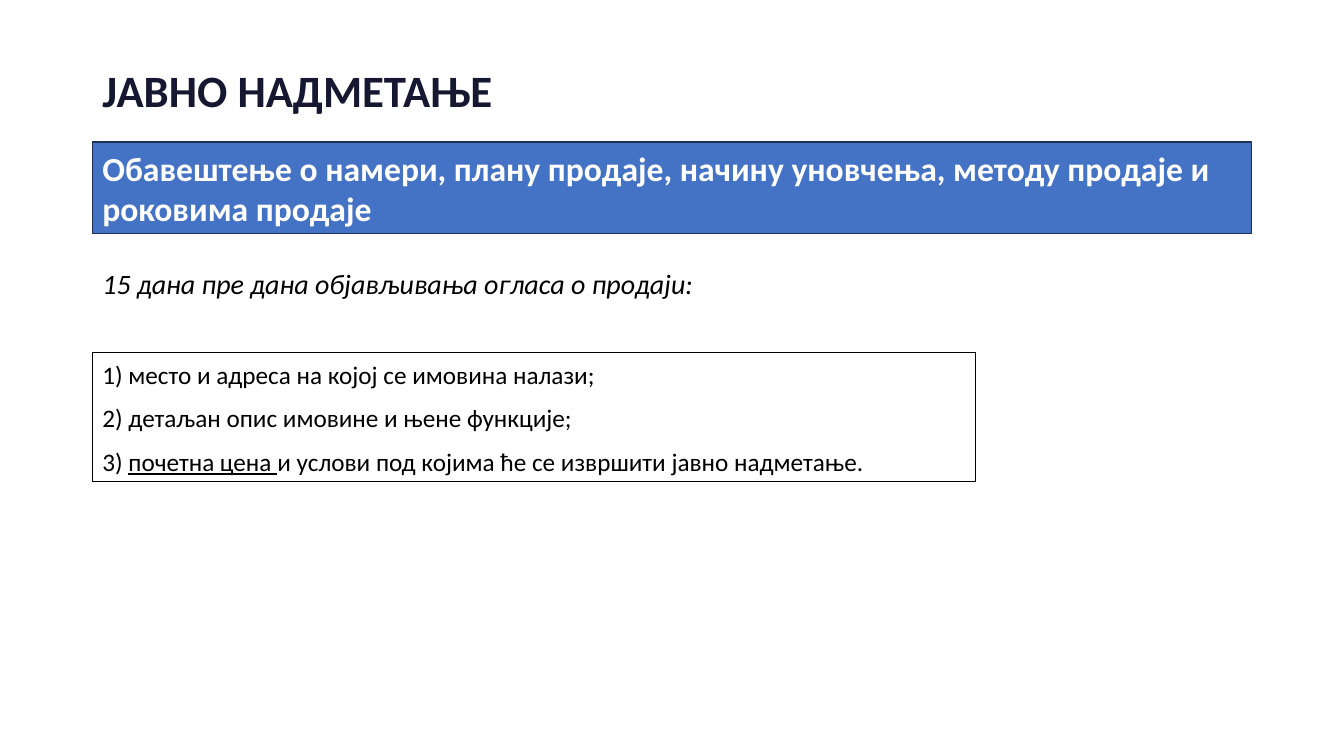
from dataclasses import dataclass
from typing import Optional

from pptx import Presentation
from pptx.dml.color import RGBColor
from pptx.enum.shapes import MSO_SHAPE
from pptx.enum.text import MSO_ANCHOR as Anchor, MSO_AUTO_SIZE as AutoSize, PP_ALIGN as Align
from pptx.slide import Slide
from pptx.util import Cm, Pt

WHITE = RGBColor(0xFF, 0xFF, 0xFF)
BLACK = RGBColor(0x00, 0x00, 0x00)
NAVY = RGBColor(0x16, 0x17, 0x30)
BLUE = RGBColor(0x44, 0x72, 0xC4)
DARK_BLUE = RGBColor(0x1E, 0x32, 0x56)

FONT = "Calibri"
LEFT = 2.33
FULL_WIDTH = 29.21


@dataclass(frozen=True)
class Border:
    color: RGBColor
    points: float


@dataclass(frozen=True)
class Block:
    paragraphs: list[list[str]]
    top: float
    height: float
    size: int
    width: float = FULL_WIDTH
    color: RGBColor = BLACK
    bold: bool = False
    italic: bool = False
    fill: Optional[RGBColor] = None
    border: Optional[Border] = None
    anchor: Anchor = Anchor.TOP
    line_spacing: float = 1.0
    space_after: int = 0
    underlined: str = ""


BLOCKS = [
    Block([["ЈАВНО НАДМЕТАЊЕ"]], top=1.57, height=1.5, size=32, color=NAVY, bold=True,
          anchor=Anchor.BOTTOM, line_spacing=0.9),
    Block([["Обавештење о намери, плану продаје, начину уновчења, методу продаје и роковима продаје"]],
          top=3.58, height=2.31, size=24, color=WHITE, bold=True,
          fill=BLUE, border=Border(DARK_BLUE, 1), anchor=Anchor.MIDDLE),
    Block([["15 дана пре дана објављивања огласа о продаји:"]],
          top=6.58, height=1.11, size=20, italic=True),
    Block([["1) место и адреса на којој се имовина налази;"],
           ["2) детаљан опис имовине и њене функције;"],
           ["3) ", "почетна цена ", "и услови под којима ће се извршити јавно надметање."]],
          top=8.87, height=3.25, size=18, width=22.25, border=Border(BLACK, 0.25),
          line_spacing=1.07, space_after=8, underlined="почетна цена "),
]


def draw_block(slide: Slide, block: Block) -> None:
    place = Cm(LEFT), Cm(block.top), Cm(block.width), Cm(block.height)
    if block.border:
        panel = slide.shapes.add_shape(MSO_SHAPE.RECTANGLE, *place)
        panel.shadow.inherit = False
        panel.line.color.rgb = block.border.color
        panel.line.width = Pt(block.border.points)
        if block.fill is None:
            panel.fill.background()
        else:
            panel.fill.solid()
            panel.fill.fore_color.rgb = block.fill
    else:
        panel = slide.shapes.add_textbox(*place)
    write_text(panel.text_frame, block)


def write_text(frame, block: Block) -> None:
    frame.text = "\n".join(first for first, *_ in block.paragraphs)
    frame.word_wrap = True
    frame.auto_size = AutoSize.SHAPE_TO_FIT_TEXT
    frame.vertical_anchor = block.anchor
    for paragraph, (_, *others) in zip(frame.paragraphs, block.paragraphs):
        paragraph.alignment = Align.LEFT
        paragraph.line_spacing = block.line_spacing
        paragraph.space_after = Pt(block.space_after)
        for words in others:
            paragraph.add_run().text = words
        for run in paragraph.runs:
            run.font.name = FONT
            run.font.size = Pt(block.size)
            run.font.bold = block.bold
            run.font.italic = block.italic
            run.font.underline = run.text == block.underlined
            run.font.color.rgb = block.color


def main() -> None:
    deck = Presentation()
    deck.slide_width, deck.slide_height = Cm(33.87), Cm(19.05)
    slide = deck.slides.add_slide(deck.slide_layouts[6])
    for block in BLOCKS:
        draw_block(slide, block)
    deck.save("out.pptx")


if __name__ == "__main__":
    main()
